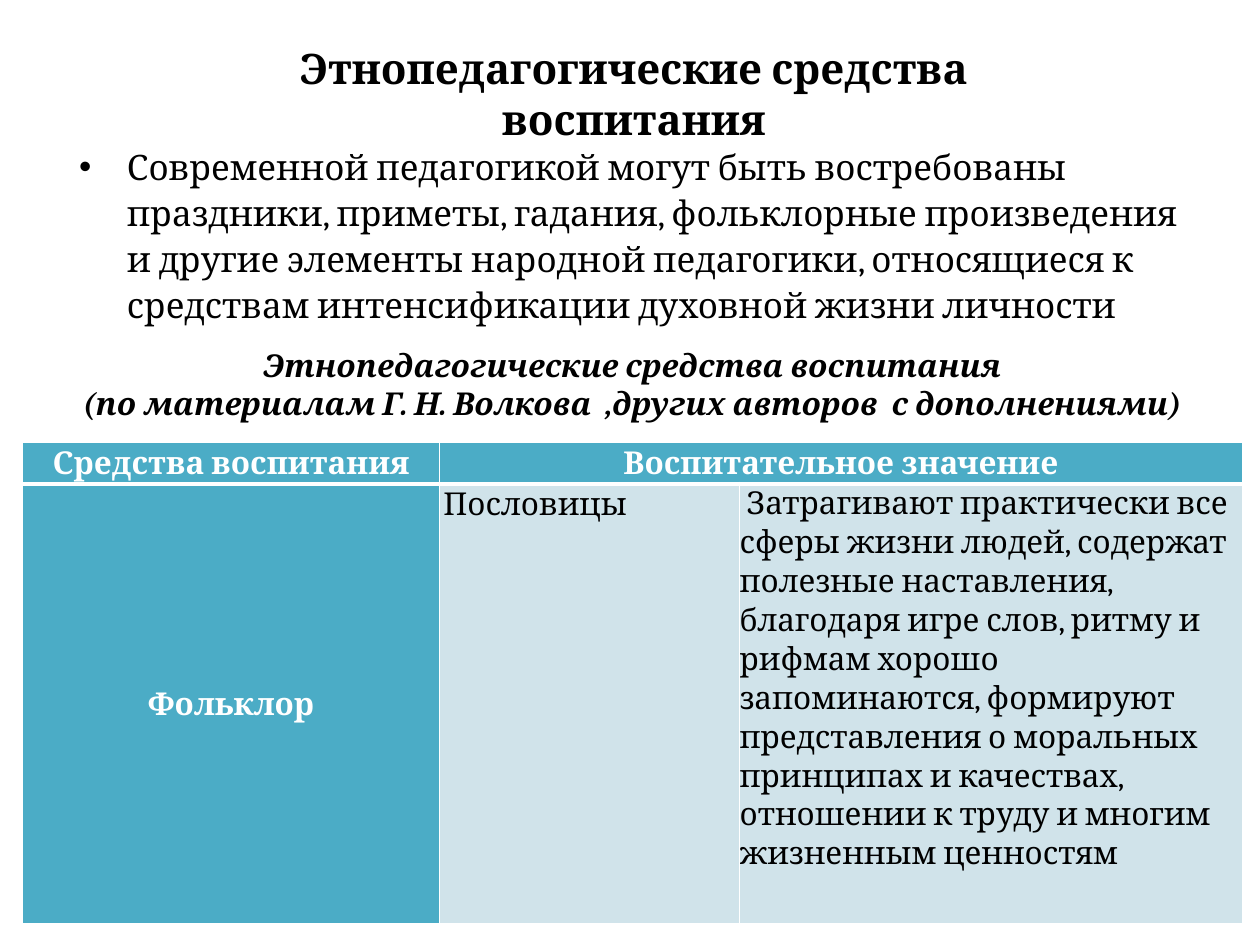
from lxml import etree
from pptx import Presentation
from pptx.dml.color import RGBColor
from pptx.enum.text import MSO_ANCHOR, PP_ALIGN
from pptx.oxml.ns import qn
from pptx.util import Inches, Pt

FONT = "Cambria"
BLACK = RGBColor(0x00, 0x00, 0x00)
WHITE = RGBColor(0xFF, 0xFF, 0xFF)
TEAL = RGBColor(0x4B, 0xAC, 0xC6)
PALE_BLUE = RGBColor(0xD0, 0xE3, 0xEA)


def write_text(text_frame, text, size, color=BLACK, bold=False, italic=False,
               alignment=PP_ALIGN.LEFT, line_spacing=None):
    """Fill the frame, one paragraph per line of text, and format every run."""
    text_frame.word_wrap = True
    text_frame.text = text
    for paragraph in text_frame.paragraphs:
        paragraph.alignment = alignment
        if line_spacing:
            paragraph.line_spacing = line_spacing
        for run in paragraph.runs:
            run.font.name = FONT
            run.font.size = Pt(size)
            run.font.color.rgb = color
            run.font.bold = bold
            run.font.italic = italic


def set_borders(cell, widths):
    """Draw white cell borders; widths maps border tags to points."""
    properties = cell._tc.get_or_add_tcPr()
    for position, (tag, width) in enumerate(widths.items()):
        line = etree.Element(qn(f"a:{tag}"), w=str(Pt(width)))
        fill = etree.SubElement(line, qn("a:solidFill"))
        etree.SubElement(fill, qn("a:srgbClr"), val=str(WHITE))
        properties.insert(position, line)


presentation = Presentation()
presentation.slide_width = Inches(10)
presentation.slide_height = Inches(7.5)
slide = presentation.slides.add_slide(presentation.slide_layouts[6])

title = slide.shapes.add_textbox(Inches(0.53), Inches(0.29), Inches(9), Inches(0.79))
write_text(title.text_frame, "Этнопедагогические средства\nвоспитания", 24,
           bold=True, alignment=PP_ALIGN.CENTER)

body = slide.shapes.add_textbox(Inches(0.53), Inches(1.07), Inches(8.96), Inches(1.62))
write_text(
    body.text_frame,
    "Современной педагогикой могут быть востребованы праздники, приметы, гадания, "
    "фольклорные произведения и другие элементы народной педагогики, относящиеся "
    "к средствам интенсификации духовной жизни личности",
    20, line_spacing=1.1)
bullet_properties = body.text_frame.paragraphs[0]._p.get_or_add_pPr()
bullet_properties.set("marL", str(Inches(0.38)))
bullet_properties.set("indent", str(Inches(-0.38)))
etree.SubElement(bullet_properties, qn("a:buFont"), typeface="Arial")
etree.SubElement(bullet_properties, qn("a:buChar"), char="•")

caption = slide.shapes.add_textbox(Inches(0.52), Inches(2.7), Inches(9), Inches(0.71))
write_text(
    caption.text_frame,
    "Этнопедагогические средства воспитания\n"
    "(по материалам Г. Н. Волкова  ,других авторов  с дополнениями)",
    18, bold=True, italic=True, alignment=PP_ALIGN.CENTER)

table = slide.shapes.add_table(
    2, 3, Inches(0.18), Inches(3.51), Inches(9.69), Inches(3.79)).table
for column, width in zip(table.columns, (3.31, 2.38, 3.99)):
    column.width = Inches(width)
for row, height in zip(table.rows, (0.29, 3.49)):
    row.height = Inches(height)

for row_index, row in enumerate(table.rows):
    for column_index, cell in enumerate(row.cells):
        is_heading = row_index == 0 or column_index == 0
        cell.fill.solid()
        cell.fill.fore_color.rgb = TEAL if is_heading else PALE_BLUE
        cell.margin_left = cell.margin_right = Inches(0.03)
        cell.margin_top = cell.margin_bottom = 0
        set_borders(cell, {"lnL": 1, "lnR": 1,
                           "lnT": 3 if row_index == 1 else 1,
                           "lnB": 3 if row_index == 0 else 1})
table.cell(0, 1).merge(table.cell(0, 2))

headings = {
    (0, 0): "Средства воспитания",
    (0, 1): "Воспитательное значение",
    (1, 0): "Фольклор",
}
for position, text in headings.items():
    write_text(table.cell(*position).text_frame, text, 18, WHITE, bold=True,
               alignment=PP_ALIGN.CENTER, line_spacing=1.1)
table.cell(1, 0).vertical_anchor = MSO_ANCHOR.MIDDLE

write_text(table.cell(1, 1).text_frame, "Пословицы", 18, line_spacing=1.1)

meaning = table.cell(1, 2)
meaning.margin_left = meaning.margin_right = 0
write_text(
    meaning.text_frame,
    " Затрагивают практически все сферы жизни людей, содержат полезные наставления, "
    "благодаря игре слов, ритму и рифмам хорошо запоминаются, формируют представления "
    "о моральных принципах и качествах, отношении к труду и многим жизненным ценностям",
    18, line_spacing=1.07)
meaning.text_frame.paragraphs[0].space_after = Pt(8)

presentation.save("out.pptx")
